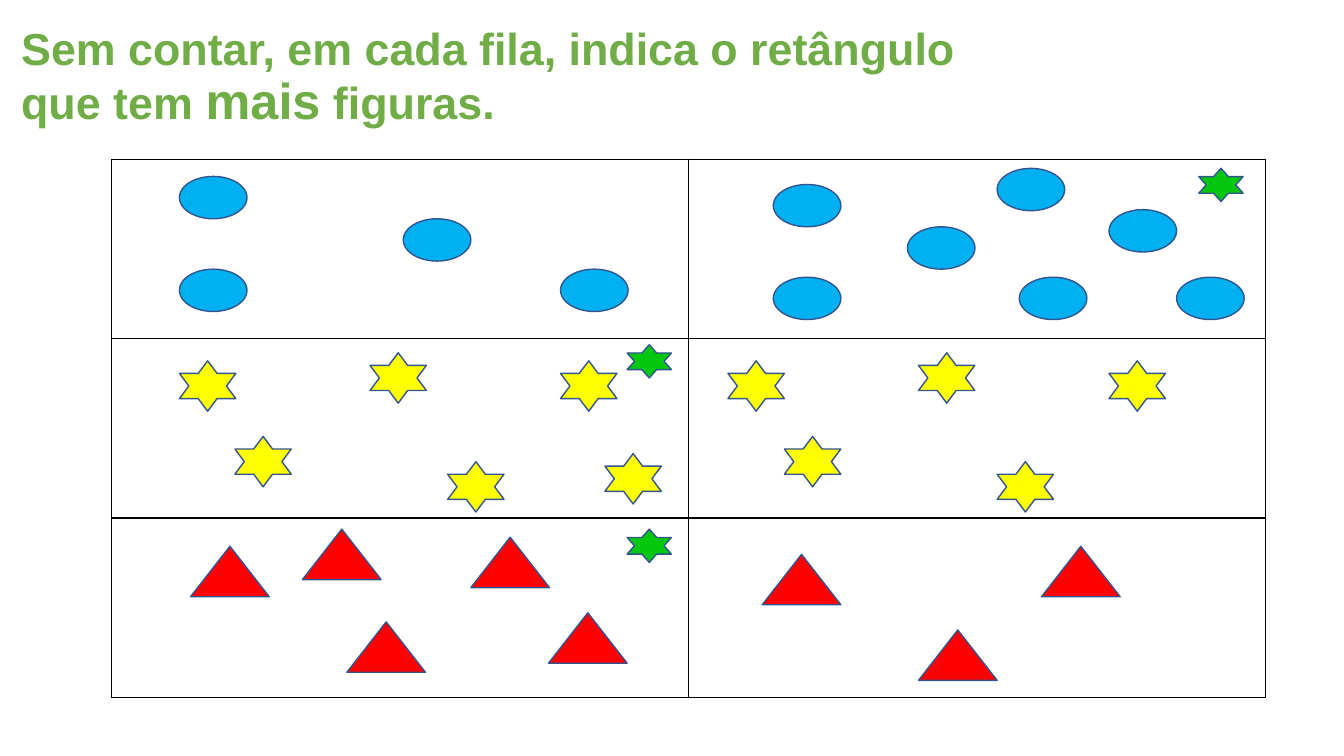
import pptx
import pptx.util
import pptx.dml.color
import pptx.enum.shapes
import pptx.enum.text
import pptx.oxml
import pptx.oxml.ns
from dataclasses import dataclass

Inches = pptx.util.Inches
Pt = pptx.util.Pt
Kind = pptx.enum.shapes.MSO_SHAPE


@dataclass(frozen=True)
class Theme:
    font: str = "Arial"
    title: str = "70AD47"
    size: int = 32
    big: int = 36
    grid: str = "000000"
    edge: str = "325491"
    blue: str = "00B0F0"
    yellow: str = "FFFF00"
    red: str = "FF0000"
    green: str = "04C80D"


THEME = Theme()

# Left and top of each figure, by table row
OVALS = [
    (1.78, 1.75), (1.78, 2.67), (4, 2.17), (5.56, 2.67),
    (7.67, 1.83), (7.67, 2.75), (9, 2.25), (11, 2.08),
    (10.11, 2.75), (11.67, 2.75), (9.89, 1.67),
]
STARS = [
    (7.22, 3.58), (7.78, 4.33), (9.11, 3.5), (9.89, 4.58), (11, 3.58),
    (1.78, 3.58), (2.33, 4.33), (3.67, 3.5), (4.44, 4.58), (5.56, 3.58),
    (6, 4.5),
]
PEAKS = [
    (1.89, 5.42), (3.44, 6.17), (4.67, 5.33), (3, 5.25),
    (5.44, 6.08), (7.56, 5.5), (9.11, 6.25), (10.33, 5.42),
]
MARKS = [(11.89, 1.67), (6.22, 3.42), (6.22, 5.25)]


def color(code):
    return pptx.dml.color.RGBColor.from_string(code)


def add_title(slide, parts):
    title = slide.shapes.title
    title.left, title.top = Inches(0.11), Inches(0.22)
    title.width, title.height = Inches(9.67), Inches(1.12)
    frame = title.text_frame
    frame.word_wrap = True
    frame.auto_size = pptx.enum.text.MSO_AUTO_SIZE.NONE
    frame.vertical_anchor = pptx.enum.text.MSO_ANCHOR.MIDDLE
    para = frame.paragraphs[0]
    para.alignment = pptx.enum.text.PP_ALIGN.LEFT
    para.line_spacing = 0.9
    for text, size in parts:
        run = para.add_run()
        run.text = text
        run.font.name = THEME.font
        run.font.size = Pt(size)
        run.font.bold = True
        run.font.color.rgb = color(THEME.title)


def set_border(cell):
    props = cell._tc.get_or_add_tcPr()
    names = pptx.oxml.ns.nsdecls("a")
    for spot, side in enumerate(("lnL", "lnR", "lnT", "lnB")):
        line = pptx.oxml.parse_xml(
            f'<a:{side} {names} w="{Pt(1)}"><a:solidFill>'
            f'<a:srgbClr val="{THEME.grid}"/></a:solidFill></a:{side}>')
        props.insert(spot, line)


def add_grid(slide, rows, cols):
    frame = slide.shapes.add_table(
        rows, cols, Inches(1.11), Inches(1.58), Inches(11.44), Inches(5.34))
    table = frame.table
    table.first_row = False
    table.horz_banding = False
    for cell in table.iter_cells():
        cell.fill.background()
        set_border(cell)


def add_set(slide, kind, fill, width, height, spots):
    for left, top in spots:
        shape = slide.shapes.add_shape(
            kind, Inches(left), Inches(top), Inches(width), Inches(height))
        shape.shadow.inherit = False
        shape.fill.solid()
        shape.fill.fore_color.rgb = color(fill)
        shape.line.color.rgb = color(THEME.edge)
        shape.line.width = Pt(1)


def main():
    deck = pptx.Presentation()
    deck.slide_width, deck.slide_height = Inches(13.33), Inches(7.5)
    slide = deck.slides.add_slide(deck.slide_layouts[5])

    # Heading
    add_title(slide, [
        ("Sem contar, em cada fila, indica o retângulo que tem ", THEME.size),
        ("mais", THEME.big),
        (" figuras.", THEME.size),
    ])

    # Rectangles to compare
    add_grid(slide, 3, 2)

    # Figures in each row, then the answer marks
    add_set(slide, Kind.STAR_6_POINT, THEME.yellow, 0.56, 0.5, STARS)
    add_set(slide, Kind.OVAL, THEME.blue, 0.67, 0.42, OVALS)
    add_set(slide, Kind.ISOSCELES_TRIANGLE, THEME.red, 0.78, 0.5, PEAKS)
    add_set(slide, Kind.STAR_6_POINT, THEME.green, 0.44, 0.33, MARKS)

    deck.save("out.pptx")


if __name__ == "__main__":
    main()
